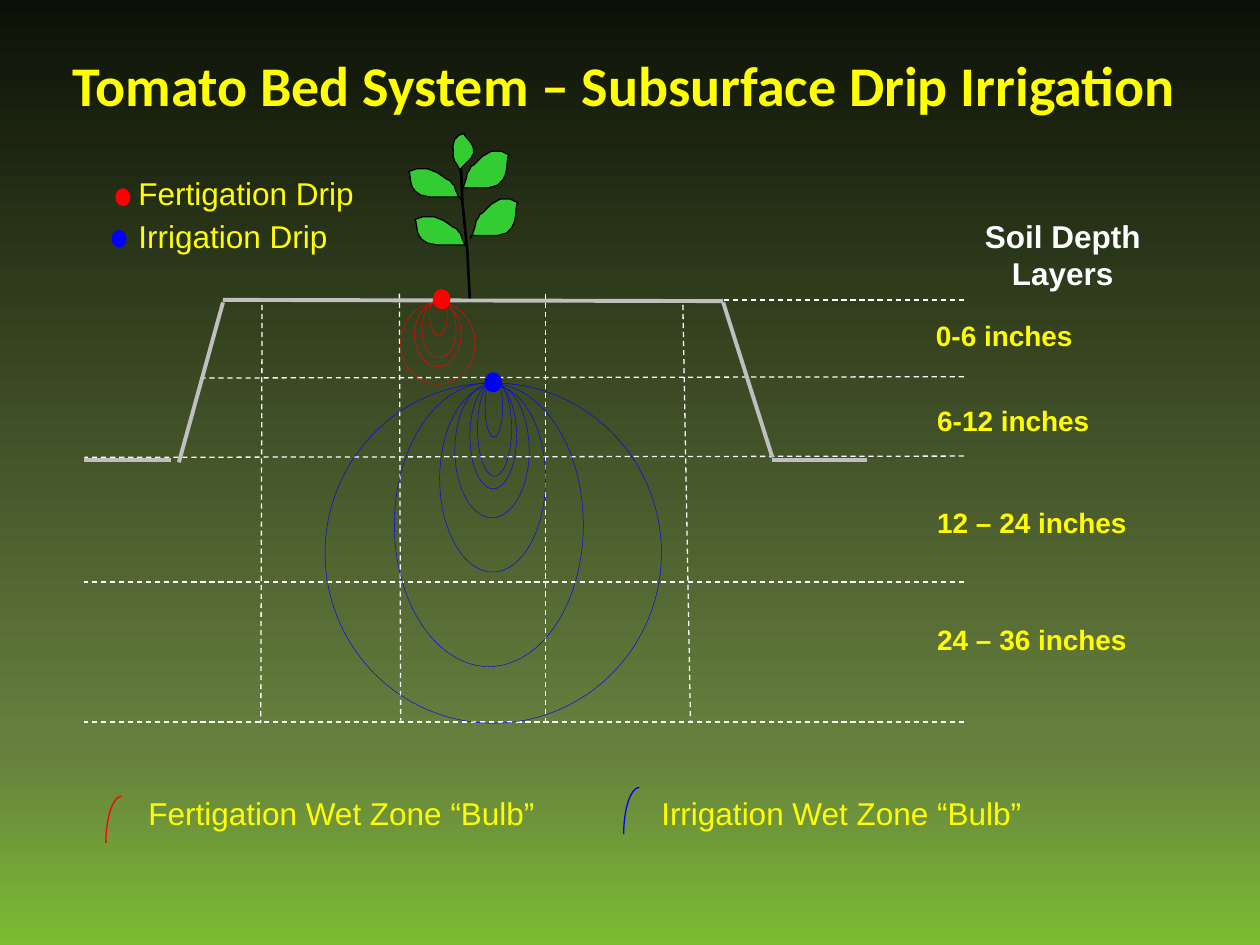
import copy

import pptx
import pptx.dml.color
import pptx.enum.dml
import pptx.enum.shapes
import pptx.enum.text
import pptx.oxml
import pptx.oxml.ns
import pptx.util

COLORS = {
    "night": "0C1107", "moss": "68813F", "grass": "7ABC32",
    "yellow": "FFFF00", "white": "FFFFFF", "black": "000000",
    "leaf": "33CC33", "soil": "BFBFBF", "fertigation": "FF0000", "irrigation": "0000FF",
}
RGB = {name: pptx.dml.color.RGBColor.from_string(code) for name, code in COLORS.items()}
SHAPES = pptx.enum.shapes.MSO_SHAPE

presentation = pptx.Presentation()
presentation.slide_width = pptx.util.Inches(10)
presentation.slide_height = pptx.util.Inches(7.5)
CELL = presentation.slide_width // 10  # the slide is a grid of 10 columns by 7.5 rows
slide = presentation.slides.add_slide(presentation.slide_layouts[6])
shapes = slide.shapes


def cells(*values):
    """Turn grid positions into slide lengths."""
    return [round(value * CELL) for value in values]


def paint(shape, line, width, fill=None):
    shape.shadow.inherit = False
    if fill:
        shape.fill.solid()
        shape.fill.fore_color.rgb = RGB[fill]
    else:
        shape.fill.background()
    shape.line.color.rgb = RGB[line]
    shape.line.width = pptx.util.Pt(width)


# Background gradient, dark at the top
background = slide.background.fill
background.gradient()
background.gradient_angle = 270
stop_list = slide.element.find(".//" + pptx.oxml.ns.qn("a:gsLst"))
stop_list.append(copy.deepcopy(stop_list[-1]))
stops = [(0, "night"), (0.8, "moss"), (1, "grass")]
for stop, (position, color) in zip(background.gradient_stops, stops):
    stop.position = position
    stop.color.rgb = RGB[color]

# Texts: wording, left, top, width, height, size, bold, colour
texts = [
    ("Tomato Bed System – Subsurface Drip Irrigation", 0.48, 0.25, 9.52, 0.83, 32, True, "yellow"),
    ("0-6 inches", 7.33, 2.48, 1.35, 0.44, 16, True, "yellow"),
    ("6-12 inches", 7.34, 3.15, 1.53, 0.44, 16, True, "yellow"),
    ("12 – 24 inches", 7.34, 3.96, 1.84, 0.44, 16, True, "yellow"),
    ("24 – 36 inches", 7.34, 4.89, 1.83, 0.44, 16, True, "yellow"),
    ("Fertigation Drip", 1, 1.33, 2.08, 0.44, 18, False, "yellow"),
    ("Irrigation Drip", 1, 1.67, 2.51, 0.44, 18, False, "yellow"),
    ("Fertigation Wet Zone “Bulb”", 1.08, 6.25, 3.43, 0.44, 18, False, "yellow"),
    ("Irrigation Wet Zone “Bulb”", 5.15, 6.25, 3.18, 0.44, 18, False, "yellow"),
    ("Soil Depth Layers", 7.37, 1.67, 2.13, 0.66, 18, True, "white"),
]
for wording, left, top, width, height, size, bold, color in texts:
    is_title = size == 32
    frame = shapes.add_textbox(*cells(left, top, width, height)).text_frame
    frame.word_wrap = True
    if is_title:
        frame.vertical_anchor = pptx.enum.text.MSO_ANCHOR.MIDDLE
    paragraph = frame.paragraphs[0]
    paragraph.text = wording
    if color == "white":
        paragraph.alignment = pptx.enum.text.PP_ALIGN.CENTER
    paragraph.font.name = "Calibri" if is_title else "Arial"
    paragraph.font.size = pptx.util.Pt(size)
    paragraph.font.bold = bold
    paragraph.font.color.rgb = RGB[color]

# Tomato plant: a stem, and one leaf outline that is scaled, mirrored or turned
stem_points = [cells(*point) for point in [(3.73, 2.4), (3.71, 2), (3.67, 1.6), (3.66, 1.34)]]
builder = shapes.build_freeform(*stem_points[0])
builder.add_line_segments(stem_points[1:], close=False)
paint(builder.convert_to_shape(), "black", 1.5)

LEAF_WIDTH, LEAF_HEIGHT = 38, 31
leaf_outline = [
    (0, 31), (2, 28), (3, 25), (4, 22), (5, 17), (6, 16), (8, 12), (10, 11), (14, 7),
    (17, 4), (24, 0), (32, 0), (36, 2), (38, 3), (37, 5), (36, 15), (35, 19), (33, 23),
    (29, 27), (22, 29), (2, 29),
]
leaves = [  # left, top, width, height, mirrored, rotation
    (3.73, 1.58, 0.38, 0.31, False, 0),
    (3.66, 1.2, 0.38, 0.31, False, 0),
    (3.24, 1.34, 0.42, 0.24, True, 0),
    (3.29, 1.72, 0.42, 0.24, True, 0),
    (3.54, 1.1, 0.24, 0.21, False, 314.2),
]
for left, top, width, height, mirrored, rotation in leaves:
    points = []
    for x, y in leaf_outline:
        across = LEAF_WIDTH - x if mirrored else x
        points.append(cells(left + width * across / LEAF_WIDTH, top + height * y / LEAF_HEIGHT))
    builder = shapes.build_freeform(*points[0])
    builder.add_line_segments(points[1:])
    leaf = builder.convert_to_shape()
    leaf.rotation = rotation
    paint(leaf, "black", 0.75, "leaf")

# Dashed depth grid and the solid outline of the bed
grid_lines = [
    (4.33, 2.33, 4.33, 5.73), (3.17, 2.33, 3.18, 5.72),
    (5.42, 2.42, 5.48, 5.72), (2.08, 2.42, 2.07, 5.74),
    (7.65, 2.99, 1.58, 3), (7.65, 2.38, 1.77, 2.38), (7.65, 3.62, 0.67, 3.63),
    (7.65, 4.62, 0.67, 4.62), (7.65, 5.73, 0.67, 5.73),
]
bed_lines = [
    (0.67, 3.65, 1.36, 3.65), (6.13, 3.65, 6.88, 3.65), (1.77, 2.38, 5.74, 2.39),
    (5.74, 2.4, 6.13, 3.63), (1.77, 2.4, 1.42, 3.67),
]
for lines, color, width, dashed in [(grid_lines, "white", 0.75, True),
                                    (bed_lines, "soil", 2.25, False)]:
    for ends in lines:
        connector = shapes.add_connector(pptx.enum.shapes.MSO_CONNECTOR.STRAIGHT, *cells(*ends))
        connector.line.color.rgb = RGB[color]
        connector.line.width = pptx.util.Pt(width)
        if dashed:
            connector.line.dash_style = pptx.enum.dml.MSO_LINE.DASH
        effects = pptx.oxml.parse_xml(f"<a:effectLst {pptx.oxml.ns.nsdecls('a')}/>")
        connector.element.spPr.append(effects)

# Drip emitters in the bed and in the legend
emitters = [
    (3.44, 2.3, 0.13, 0.15, "fertigation"), (3.85, 2.96, 0.13, 0.15, "irrigation"),
    (0.92, 1.5, 0.11, 0.13, "fertigation"), (0.89, 1.83, 0.11, 0.13, "irrigation"),
]
for *box, color in emitters:
    paint(shapes.add_shape(SHAPES.OVAL, *cells(*box)), color, 0.75, color)

# Wet zone bulbs
bulbs = {
    "fertigation": [
        (3.41, 2.36, 0.14, 0.3), (3.35, 2.38, 0.27, 0.46),
        (3.29, 2.4, 0.37, 0.51), (3.18, 2.4, 0.59, 0.65),
    ],
    "irrigation": [
        (3.85, 2.99, 0.14, 0.48), (3.79, 3.02, 0.27, 0.76), (3.73, 3.04, 0.37, 0.84),
        (3.61, 3.04, 0.59, 1.07), (3.49, 3.06, 0.84, 1.48), (3.13, 3.04, 1.5, 2.25),
        (2.58, 3.04, 2.67, 2.7),
    ],
}
for color, boxes in bulbs.items():
    for box in boxes:
        paint(shapes.add_shape(SHAPES.OVAL, *cells(*box)), color, 0.25)

# Legend arcs: the upper left quarter of an ellipse
for left, top, color in [(0.84, 6.32, "fertigation"), (4.95, 6.25, "irrigation")]:
    arc = shapes.add_shape(SHAPES.ARC, *cells(left, top, 0.25, 0.74))
    arc.adjustments[0] = 108  # 180 degrees
    arc.adjustments[1] = 162  # 270 degrees
    paint(arc, color, 0.75)

presentation.save("out.pptx")
